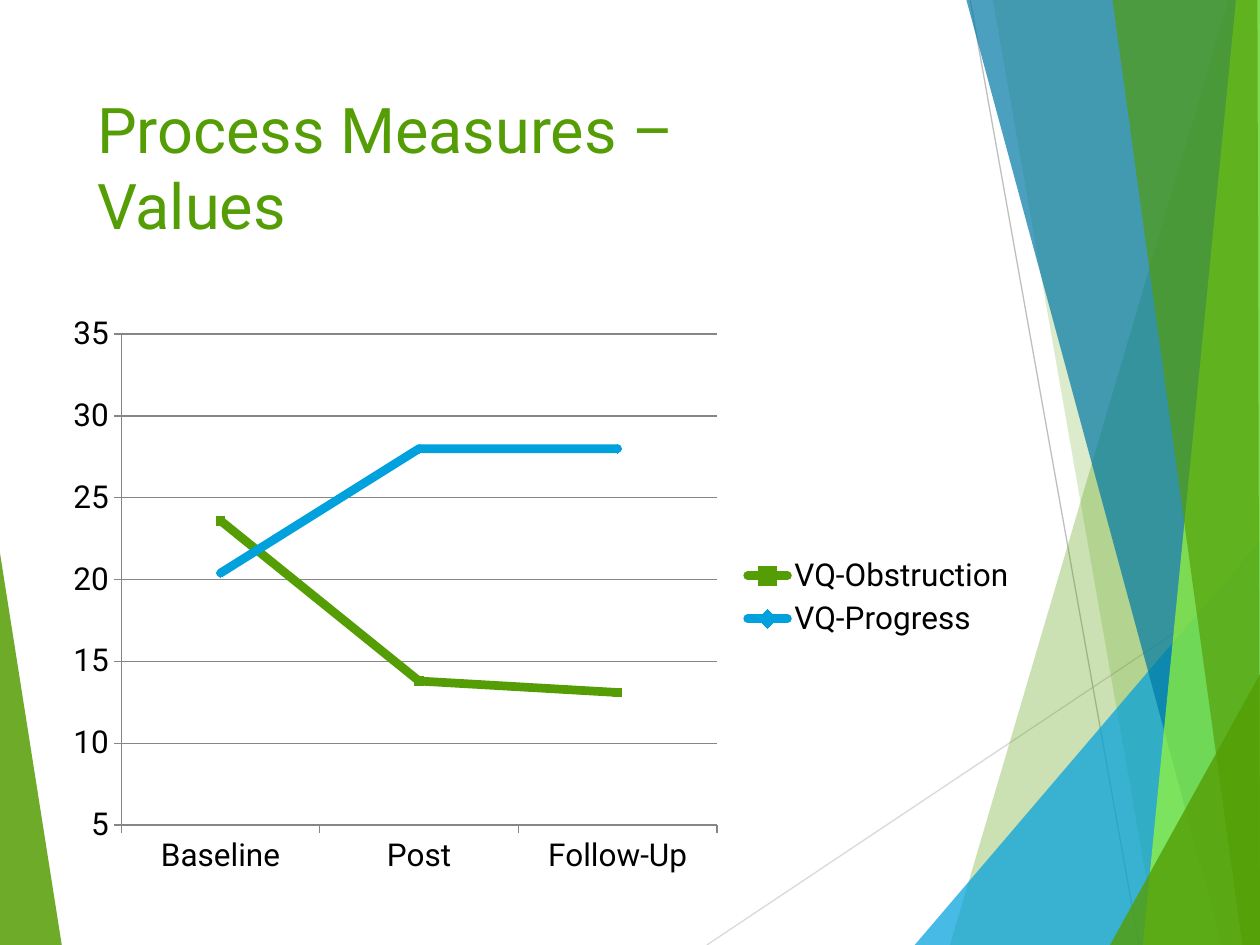
from lxml import etree
from pptx import Presentation
from pptx import util as u
from pptx.chart.data import CategoryChartData
from pptx.dml.color import RGBColor
from pptx.enum import chart as charts, shapes, text
from pptx.oxml import parse_xml
from pptx.oxml.ns import nsdecls, qn

GREEN = RGBColor(0x54, 0x9D, 0x04)
LIME = RGBColor(0x9B, 0xFA, 0x33)
BLUE = RGBColor(0x00, 0xA1, 0xDC)
DEEP_BLUE = RGBColor(0x00, 0x79, 0xA5)
BLACK = RGBColor(0x00, 0x00, 0x00)
AXIS_GREY = RGBColor(0x86, 0x86, 0x86)
MID_GREY = RGBColor(0xBF, 0xBF, 0xBF)
PALE_GREY = RGBColor(0xD9, 0xD9, 0xD9)

COLUMNS, ROWS = 10, 7.5
FONT = "Roboto"


class Facet:
    """Style and current slide; lengths are columns and rows of the grid."""

    def __init__(self, deck):
        self.column = deck.slide_width / COLUMNS
        self.row = deck.slide_height / ROWS
        self.page = deck.slides.add_slide(deck.slide_layouts[5])

    def grid(self, *lengths):
        """Turn alternating columns and rows into EMU."""
        return [round(length * (self.row if index % 2 else self.column))
                for index, length in enumerate(lengths)]

    def shard(self, color, opacity, *corners):
        points = [self.grid(*corner) for corner in corners]
        builder = self.page.shapes.build_freeform(*points[0])
        builder.add_line_segments(points[1:], close=True)
        shape = builder.convert_to_shape()
        shape.shadow.inherit = False
        shape.line.fill.background()
        shape.fill.solid()
        shape.fill.fore_color.rgb = color
        tint = shape.element.spPr.find(f"{qn('a:solidFill')}/{qn('a:srgbClr')}")
        etree.SubElement(tint, qn("a:alpha"), val=str(opacity * 1000))

    def ray(self, color, start, end):
        line = self.page.shapes.add_connector(
            shapes.MSO_CONNECTOR.STRAIGHT, *self.grid(*start), *self.grid(*end))
        line.line.color.rgb = color
        line.line.width = u.Pt(0.75)
        etree.SubElement(line.element.spPr, qn("a:effectLst"))

    def title(self, wording, *place):
        box = self.page.shapes.title
        box.left, box.top, box.width, box.height = self.grid(*place)
        box.element.getparent().append(box.element)  # in front of the shards
        frame = box.text_frame
        frame.text = wording
        frame.word_wrap = True
        frame.auto_size = text.MSO_AUTO_SIZE.NONE
        frame.vertical_anchor = text.MSO_ANCHOR.TOP
        para = frame.paragraphs[0]
        para.alignment = text.PP_ALIGN.LEFT
        para.font.name, para.font.size = FONT, u.Pt(36)
        para.font.color.rgb = GREEN

    def line_chart(self, categories, measures, *place):
        """Measures are rows of name, values, color and marker style."""
        data = CategoryChartData()
        data.categories = categories
        for name, values, *_ in measures:
            data.add_series(name, values)
        chart = self.page.shapes.add_chart(
            charts.XL_CHART_TYPE.LINE_MARKERS, *self.grid(*place), data).chart
        chart.has_title = False
        chart.font.name, chart.font.size = FONT, u.Pt(18)
        chart.font.color.rgb = BLACK
        chart.has_legend = True
        chart.legend.position = charts.XL_LEGEND_POSITION.RIGHT
        chart.legend.include_in_layout = False
        self.axes(chart)
        self.plot_area(chart, x=0.07, y=0.05, w=0.61, h=0.84)
        chart.plots[0].vary_by_categories = False
        for series, (_, _, color, style) in zip(chart.plots[0].series, measures):
            series.smooth = False
            series.format.line.color.rgb = color
            series.format.line.width = u.Pt(5)
            series.marker.style, series.marker.size = style, 5
            series.marker.format.fill.solid()
            series.marker.format.fill.fore_color.rgb = color
            series.marker.format.line.color.rgb = color
        for outline in chart.element.xpath(".//c:ser/c:spPr/a:ln"):
            outline.set("cap", "rnd")

    def axes(self, chart):
        scale = chart.value_axis
        scale.minimum_scale, scale.maximum_scale, scale.major_unit = 5, 35, 5
        scale.has_major_gridlines = True
        for axis in (scale, chart.category_axis):
            axis.major_tick_mark = charts.XL_TICK_MARK.OUTSIDE
        for part in (scale, scale.major_gridlines, chart.category_axis):
            part.format.line.color.rgb = AXIS_GREY
            part.format.line.width = u.Pt(0.75)

    def plot_area(self, chart, **shares):
        """Fix the inner plot area as shares of the chart's size."""
        area = chart.element.find(f".//{qn('c:plotArea')}")
        for layout in area.findall(qn("c:layout")):
            area.remove(layout)
        sizes = "".join(f'<c:{side} val="{share}"/>' for side, share in shares.items())
        area.insert(0, parse_xml(
            f'<c:layout {nsdecls("c")}><c:manualLayout><c:layoutTarget val="inner"/>'
            f'<c:xMode val="edge"/><c:yMode val="edge"/>{sizes}'
            '</c:manualLayout></c:layout>'))


def main():
    deck = Presentation()
    deck.slide_width, deck.slide_height = u.Inches(10), u.Inches(7.5)
    facet = Facet(deck)
    top_right, bottom_right = (COLUMNS, 0), (COLUMNS, ROWS)

    facet.shard(GREEN, 85, (0, 4.39), (0.49, ROWS), (0, ROWS))
    facet.ray(PALE_GREY, (5.61, ROWS), (COLUMNS, 4.57))
    facet.ray(MID_GREY, (7.7, 0), (9.04, ROWS))
    for color, opacity, *corners in (
        (GREEN, 30, (9.75, 0), (7.54, ROWS), bottom_right, top_right),
        (GREEN, 20, (7.88, 0), (9.19, ROWS), bottom_right, top_right),
        (BLUE, 72, (7.26, ROWS), (COLUMNS, 4.29), bottom_right),
        (DEEP_BLUE, 70, (7.67, 0), (9.7, ROWS), bottom_right, top_right),
        (LIME, 70, (9.81, 0), (9.07, ROWS), bottom_right, top_right),
        (GREEN, 65, (8.83, 0), (9.86, ROWS), bottom_right, (9.98, 0)),
        (GREEN, 80, (8.81, ROWS), (COLUMNS, 5.35), bottom_right),
    ):
        facet.shard(color, opacity, *corners)

    facet.title("Process Measures – \vValues", 0.67, 0.67, 6.94, 1.44)
    marker = charts.XL_MARKER_STYLE
    facet.line_chart(
        ("Baseline", "Post", "Follow-Up"),
        (("VQ-Obstruction", (23.6, 13.8, 13.1), GREEN, marker.SQUARE),
         ("VQ-Progress", (20.4, 28, 28), BLUE, marker.DIAMOND)),
        0.42, 2.42, 7.75, 4.64)
    deck.save("out.pptx")


if __name__ == "__main__":
    main()
